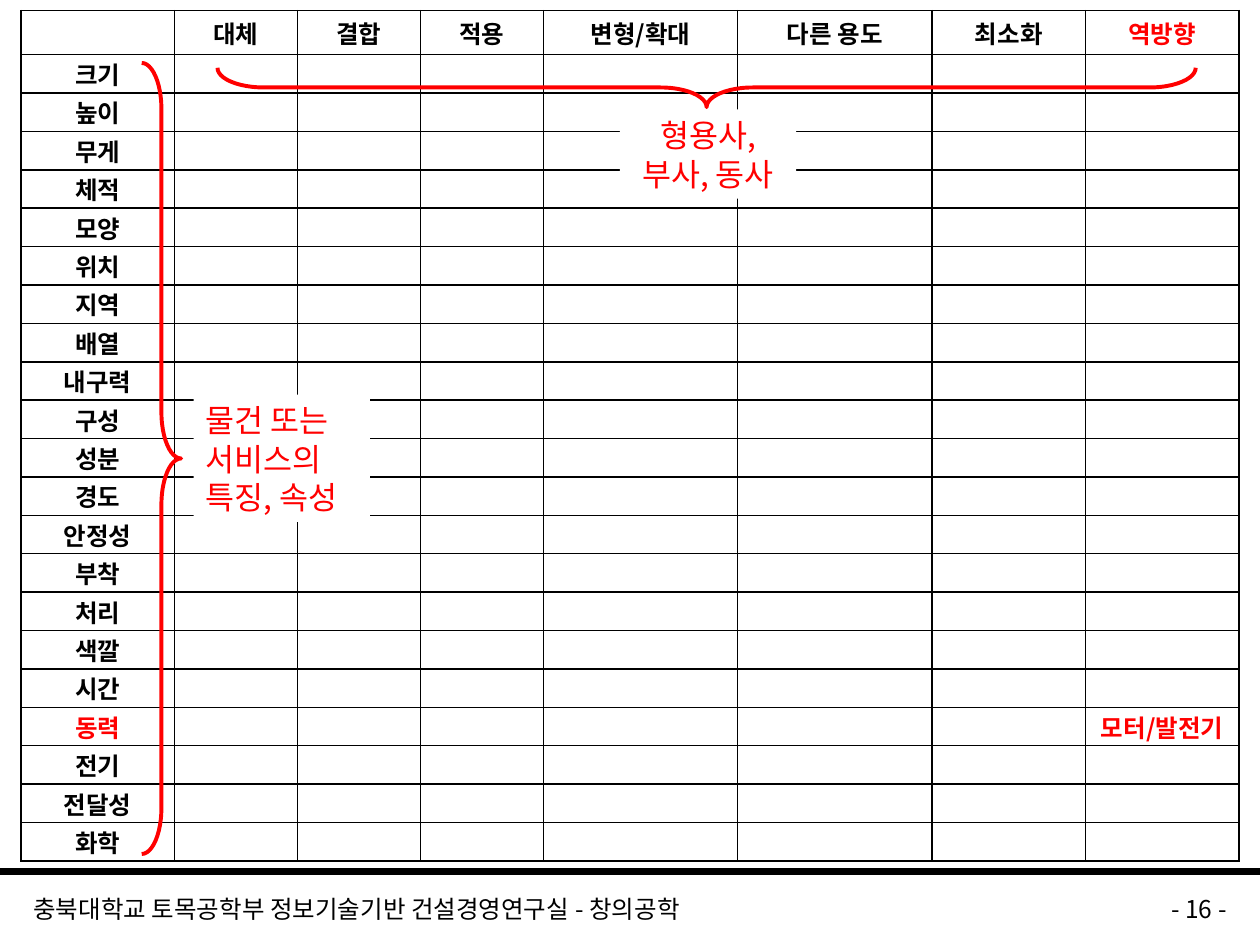
from pptx import Presentation
from pptx.dml.color import RGBColor
from pptx.enum import shapes, text
from pptx.oxml import parse_xml
from pptx.oxml import ns
from pptx.util import Pt

FONT = "Noto Sans CJK KR"
COLORS = {"ink": "000000", "accent": "FF0000", "paper": "FFFFFF"}
METHODS = ["대체", "결합", "적용", "변형/확대", "다른 용도", "최소화", "역방향"]
ATTRIBUTES = ["크기", "높이", "무게", "체적", "모양", "위치", "지역", "배열",
              "내구력", "구성", "성분", "경도", "안정성", "부착", "처리", "색깔",
              "시간", "동력", "전기", "전달성", "화학"]
HIGHLIGHTS = {"역방향", "동력", "모터/발전기"}
COLUMN_WIDTHS = [87.6, 70.3, 70.3, 70.3, 111.1, 111.1, 87.6, 87.7]
TABLE_HEIGHT = 486
HEADER_HEIGHT = 25.2


def color(name):
    return RGBColor.from_string(COLORS[name])


def write(frame, content, size=14, ink="ink", bold=False,
          align=text.PP_ALIGN.LEFT, spacing=None):
    para = frame.paragraphs[0]
    para.alignment = align
    if spacing:
        para.line_spacing = Pt(spacing)
    span = para.add_run()
    span.text = content
    span.font.size = Pt(size)
    span.font.bold = bold
    span.font.color.rgb = color(ink)
    span.font.name = FONT
    east_asian = parse_xml(f'<a:ea {ns.nsdecls("a")} typeface="{FONT}"/>')
    span.font._element.find(ns.qn("a:latin")).addnext(east_asian)


def add_rule(page, y, weight):
    rule = page.shapes.add_connector(
        shapes.MSO_CONNECTOR.STRAIGHT, Pt(0), Pt(y), Pt(720), Pt(y))
    rule.line.color.rgb = color("ink")
    rule.line.width = Pt(weight)
    rule._element.spPr.append(parse_xml(f'<a:effectLst {ns.nsdecls("a")}/>'))


def add_footer(page, left, width, content, align):
    box = page.shapes.add_textbox(Pt(left), Pt(510), Pt(width), Pt(18))
    frame = box.text_frame
    frame.word_wrap = True
    frame.vertical_anchor = text.MSO_ANCHOR.MIDDLE
    frame.margin_top = frame.margin_bottom = 0
    write(frame, content, align=align)


def format_cell(cell, content):
    properties = cell._tc.get_or_add_tcPr()
    for side in "LRTB":
        properties.append(parse_xml(
            f'<a:ln{side} {ns.nsdecls("a")} w="12700"><a:solidFill>'
            f'<a:srgbClr val="{COLORS["ink"]}"/></a:solidFill></a:ln{side}>'))
    cell.fill.solid()
    cell.fill.fore_color.rgb = color("paper")
    cell.vertical_anchor = text.MSO_ANCHOR.MIDDLE
    cell.margin_top = cell.margin_bottom = 0
    cell.margin_left = cell.margin_right = Pt(3 if "발전기" in content else 7.2)
    if content:
        write(cell.text_frame, content, bold=True, align=text.PP_ALIGN.CENTER,
              ink="accent" if content in HIGHLIGHTS else "ink")
    else:
        cell.text_frame.paragraphs[0]._p.append(
            parse_xml(f'<a:endParaRPr {ns.nsdecls("a")} sz="1400"/>'))


def add_matrix(page):
    row_count = len(ATTRIBUTES) + 1
    table = page.shapes.add_table(
        row_count, len(COLUMN_WIDTHS), Pt(12), Pt(6),
        Pt(sum(COLUMN_WIDTHS)), Pt(TABLE_HEIGHT)).table
    table.first_row = table.horz_banding = False
    for column, width in zip(table.columns, COLUMN_WIDTHS):
        column.width = Pt(width)
    row_height = (TABLE_HEIGHT - HEADER_HEIGHT) / len(ATTRIBUTES)
    for index, row in enumerate(table.rows):
        row.height = Pt(row_height if index else HEADER_HEIGHT)

    entries = {(0, column): name for column, name in enumerate(METHODS, 1)}
    entries.update({(row, 0): name for row, name in enumerate(ATTRIBUTES, 1)})
    example = (ATTRIBUTES.index("동력") + 1, METHODS.index("역방향") + 1)
    entries[example] = "모터/발전기"
    for row in range(row_count):
        for column in range(len(COLUMN_WIDTHS)):
            format_cell(table.cell(row, column), entries.get((row, column), ""))


def add_label(page, left, top, height, content, align):
    box = page.shapes.add_shape(shapes.MSO_SHAPE.RECTANGLE,
                                Pt(left), Pt(top), Pt(100.8), Pt(height))
    box.shadow.inherit = False
    box.fill.solid()
    box.fill.fore_color.rgb = color("paper")
    box.line.fill.background()
    frame = box.text_frame
    frame.word_wrap = True
    frame.vertical_anchor = text.MSO_ANCHOR.MIDDLE
    write(frame, content, size=18, ink="accent", align=align, spacing=22)


def add_brace(page, left, top, height, rotation=0):
    brace = page.shapes.add_shape(shapes.MSO_SHAPE.RIGHT_BRACE,
                                  Pt(left), Pt(top), Pt(22.5), Pt(height))
    brace.shadow.inherit = False
    brace.fill.background()
    brace.line.color.rgb = color("accent")
    brace.line.width = Pt(2.25)
    brace.adjustments[0] = 1.175
    brace.adjustments[1] = 0.5
    brace.rotation = rotation


def main():
    deck = Presentation()
    deck.slide_width, deck.slide_height = Pt(720), Pt(540)
    page = deck.slides.add_slide(deck.slide_layouts[6])
    add_rule(page, 498, 4.5)
    add_footer(page, 12, 564, "충북대학교 토목공학부 정보기술기반 건설경영연구실 - 창의공학",
               text.PP_ALIGN.LEFT)
    add_footer(page, 588, 120, "- 16 -", text.PP_ALIGN.RIGHT)
    add_matrix(page)
    add_label(page, 110.6, 225.5, 72.7, "물건 또는 서비스의 특징, 속성",
              text.PP_ALIGN.LEFT)
    add_brace(page, 81, 36, 452)
    add_brace(page, 392.5, -229.5, 559, rotation=90)
    add_label(page, 354.2, 62.5, 51, "형용사, 부사, 동사", text.PP_ALIGN.CENTER)
    deck.save("out.pptx")


if __name__ == "__main__":
    main()
